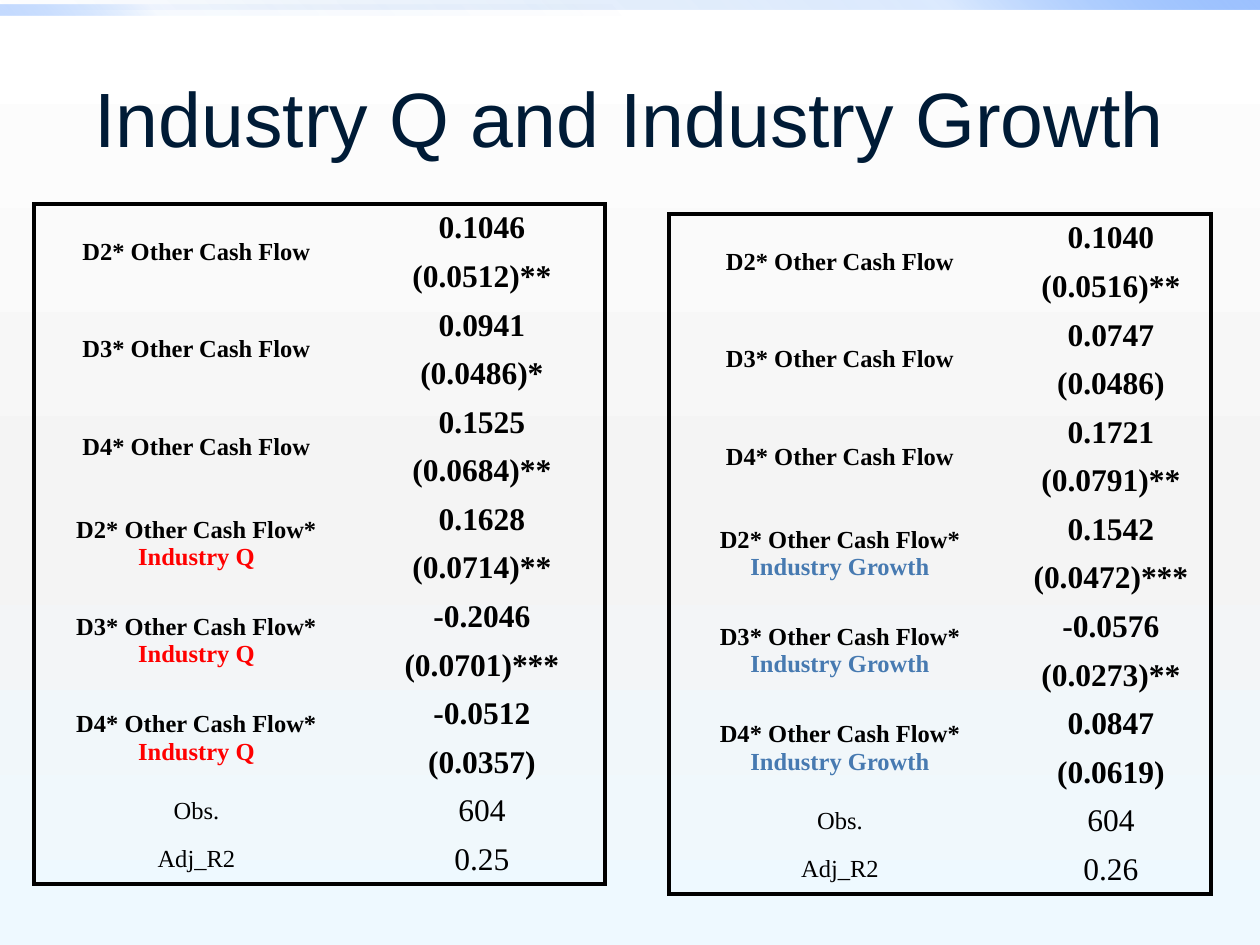
from lxml.etree import SubElement
from pptx import Presentation
from pptx.dml.color import RGBColor
from pptx.enum.shapes import MSO_SHAPE
from pptx.enum.text import MSO_ANCHOR, PP_ALIGN
from pptx.oxml.ns import qn
from pptx.util import Pt

TITLE = "Industry Q and Industry Growth"
PERIODS = ["D2", "D3", "D4"]
BLACK = "000000"
NO_STYLE_NO_GRID = "{2D5ABB26-0587-4C30-8999-92F81FD0307C}"

# Coefficients pair an estimate with its standard error
REGRESSIONS = [
    {
        "factor": "Industry Q", "colour": "FF0000",
        "left": 34, "top": 204, "columns": [325, 246],
        "coefficients": [
            ("0.1046", "(0.0512)**"), ("0.0941", "(0.0486)*"),
            ("0.1525", "(0.0684)**"), ("0.1628", "(0.0714)**"),
            ("-0.2046", "(0.0701)***"), ("-0.0512", "(0.0357)"),
        ],
        "statistics": [("Obs.", "604"), ("Adj_R2", "0.25")],
    },
    {
        "factor": "Industry Growth", "colour": "477AB1",
        "left": 669, "top": 214, "columns": [342, 200],
        "coefficients": [
            ("0.1040", "(0.0516)**"), ("0.0747", "(0.0486)"),
            ("0.1721", "(0.0791)**"), ("0.1542", "(0.0472)***"),
            ("-0.0576", "(0.0273)**"), ("0.0847", "(0.0619)"),
        ],
        "statistics": [("Obs.", "604"), ("Adj_R2", "0.26")],
    },
]
TABLE_HEIGHT = 680

# Gradient stops: position %, colour, opacity %
BACKGROUND = [(0, "FFFFFF", 100), (55, "F4F4F4", 100), (100, "EEF9FF", 100)]
STRIPS = [
    ((0, 0, 1260, 10), 315,
     [(0, "0058B7", 0), (75, "4F95FF", 20), (100, "9EC2FF", 100)]),
    ((0, 5, 630, 10), 135,
     [(0, "0058B7", 0), (75, "4F95FF", 5), (100, "9EC2FF", 60)]),
]


def px(value):
    return round(value * 914400 / 126)


def rgb(value):
    return RGBColor.from_string(value)


def set_gradient(fill, owner, angle, stops):
    """Fill with stops along a clockwise angle; owner is the XML holding the fill."""
    fill.gradient()
    gradient = owner.find(".//" + qn("a:gradFill"))
    for child in list(gradient):
        gradient.remove(child)
    stop_list = SubElement(gradient, qn("a:gsLst"))
    for position, colour, opacity in stops:
        stop = SubElement(stop_list, qn("a:gs"), pos=str(position * 1000))
        colour_node = SubElement(stop, qn("a:srgbClr"), val=colour)
        if opacity < 100:
            SubElement(colour_node, qn("a:alpha"), val=str(opacity * 1000))
    SubElement(gradient, qn("a:lin"), ang=str(angle * 60000), scaled="0")


def write_runs(frame, runs, **font_values):
    """Write (text, colour) runs into one centred paragraph."""
    paragraph = frame.paragraphs[0]
    paragraph.alignment = PP_ALIGN.CENTER
    for text, colour in runs:
        run = paragraph.add_run()
        run.text = text
        for name, value in font_values.items():
            setattr(run.font, name, value)
        run.font.color.rgb = rgb(colour)


def fill_cell(cell, runs, size, bold):
    write_runs(cell.text_frame, runs,
               name="Times New Roman", size=Pt(size), bold=bold)


def format_cell(cell, outer_sides):
    """Clear the fill and rule only the sides on the table's outline."""
    layout = {"vertical_anchor": MSO_ANCHOR.MIDDLE,
              "margin_left": px(2), "margin_right": px(2),
              "margin_top": 0, "margin_bottom": 0}
    for name, value in layout.items():
        setattr(cell, name, value)
    properties = cell._tc.get_or_add_tcPr()
    for side, is_outer in outer_sides.items():
        border = SubElement(properties, qn(f"a:ln{side}"), w=str(Pt(2.25)))
        if is_outer:
            solid = SubElement(border, qn("a:solidFill"))
            SubElement(solid, qn("a:srgbClr"), val=BLACK)
        else:
            SubElement(border, qn("a:noFill"))
    cell.fill.background()


def add_regression(slide, regression):
    coefficients = regression["coefficients"]
    statistics = regression["statistics"]
    row_count = 2 * len(coefficients) + len(statistics)
    columns = regression["columns"]
    frame = slide.shapes.add_table(
        row_count, len(columns), px(regression["left"]), px(regression["top"]),
        px(sum(columns)), px(TABLE_HEIGHT))
    table = frame.table
    table.first_row = table.horz_banding = False
    table._tbl.tblPr.find(qn("a:tableStyleId")).text = NO_STYLE_NO_GRID
    for column, width in zip(table.columns, columns):
        column.width = px(width)
    for r, row in enumerate(table.rows):
        row.height = px(TABLE_HEIGHT / row_count)
        for c, cell in enumerate(row.cells):
            format_cell(cell, {"L": c == 0, "R": c == len(columns) - 1,
                               "T": r == 0, "B": r == row_count - 1})

    for i, values in enumerate(coefficients):
        label = f"{PERIODS[i % len(PERIODS)]}* Other Cash Flow"
        runs = [(label, BLACK)]
        if i >= len(PERIODS):
            runs = [(label + "* ", BLACK),
                    (regression["factor"], regression["colour"])]
        label_cell = table.cell(2 * i, 0)
        label_cell.merge(table.cell(2 * i + 1, 0))
        fill_cell(label_cell, runs, 14, True)
        for offset, value in enumerate(values):
            fill_cell(table.cell(2 * i + offset, 1), [(value, BLACK)], 18, True)

    for r, (label, value) in enumerate(statistics, 2 * len(coefficients)):
        fill_cell(table.cell(r, 0), [(label, BLACK)], 14, False)
        fill_cell(table.cell(r, 1), [(value, BLACK)], 18, False)


def main():
    deck = Presentation()
    deck.slide_width, deck.slide_height = px(1260), px(945)
    slide = deck.slides.add_slide(deck.slide_layouts[6])
    set_gradient(slide.background.fill, slide.element, 90, BACKGROUND)

    for box, angle, stops in STRIPS:
        strip = slide.shapes.add_shape(MSO_SHAPE.RECTANGLE, *map(px, box))
        strip.shadow.inherit = False
        strip.line.fill.background()
        set_gradient(strip.fill, strip.element, angle, stops)

    title = slide.shapes.add_textbox(*map(px, (63, 38, 1134, 158))).text_frame
    title.word_wrap = True
    title.vertical_anchor = MSO_ANCHOR.MIDDLE
    write_runs(title, [(TITLE, "001B36")], name="Arial", size=Pt(44))

    for regression in REGRESSIONS:
        add_regression(slide, regression)
    deck.save("out.pptx")


if __name__ == "__main__":
    main()
